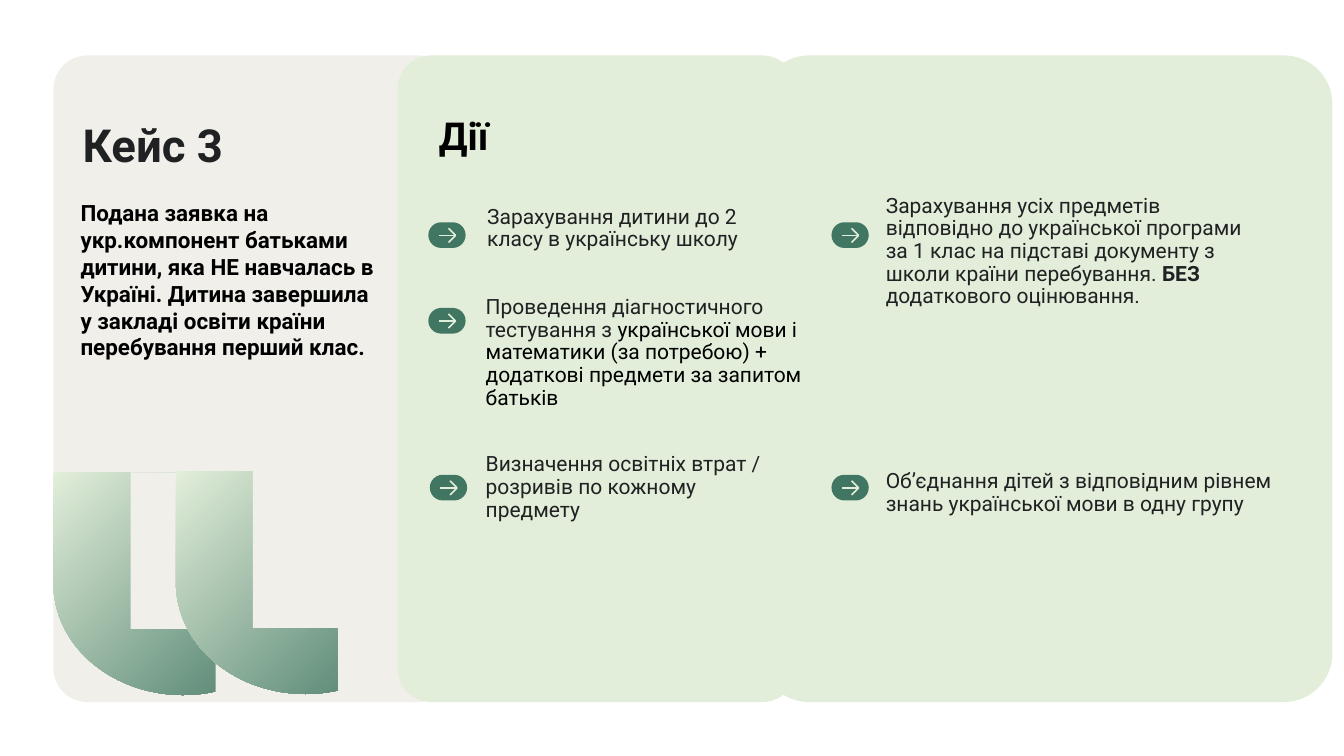
from lxml.etree import SubElement
from pptx import Presentation
from pptx.dml.color import RGBColor
from pptx.enum.shapes import MSO_CONNECTOR as Connector, MSO_SHAPE as Shape
from pptx.enum.text import MSO_ANCHOR as Anchor, MSO_AUTO_SIZE as AutoSize
from pptx.oxml.ns import qn
from pptx.util import Inches, Pt

COLORS = {
    "sand": "F0EFEA",
    "mint": "E2EEDA",
    "green": "417662",
    "ink": "202122",
    "black": "000000",
}
FONT = "Roboto"
PANEL_TOP, PANEL_HEIGHT = 1.1, 12.83
BADGE_WIDTH, BADGE_HEIGHT = 0.74, 0.51
ARROW_TIP = (0.54, 0.26)
ARROW_TAILS = [(0.4, 0.12), (0.4, 0.4), (0.21, 0.26)]


def color(name):
    return RGBColor.from_string(COLORS[name])


def apply(target, values):
    for attribute, value in values.items():
        setattr(target, attribute, value)


class CaseSlide:
    def __init__(self, slide):
        self.shapes = slide.shapes
        self.action_format = {"line_spacing": 0.9, "space_before": Pt(45)}

    def block(self, kind, box, fill=None, corner=None):
        shape = self.shapes.add_shape(kind, *map(Inches, box))
        shape.shadow.inherit = False
        shape.line.fill.background()
        if fill:
            shape.fill.solid()
            shape.fill.fore_color.rgb = color(fill)
        if corner is not None:
            shape.adjustments[0] = corner
        return shape

    def panel(self, left, width, fill):
        box = (left, PANEL_TOP, width, PANEL_HEIGHT)
        self.block(Shape.ROUNDED_RECTANGLE, box, fill, 0.085)

    def quote_mark(self, curve, *cutouts):
        mark = self.block(Shape.FLOWCHART_DELAY, curve)
        mark.rotation = 90
        mark.fill.gradient()
        mark.fill.gradient_angle = 45
        for stop, name in zip(mark.fill.gradient_stops, ("mint", "green")):
            stop.color.rgb = color(name)
        for cutout in cutouts:
            self.block(Shape.RECTANGLE, cutout, "sand")

    def arrow_badge(self, left, top):
        box = (left, top, BADGE_WIDTH, BADGE_HEIGHT)
        self.block(Shape.ROUNDED_RECTANGLE, box, "green", 0.5)
        tip_x, tip_y = ARROW_TIP
        for tail_x, tail_y in ARROW_TAILS:
            ends = (left + tail_x, top + tail_y, left + tip_x, top + tip_y)
            stroke = self.shapes.add_connector(Connector.STRAIGHT, *map(Inches, ends))
            stroke.line.color.rgb = color("mint")
            stroke.line.width = Pt(2.25)
            SubElement(stroke._element.spPr, qn("a:effectLst"))

    def text(self, box, size, runs, paragraph_format=None, inset=0.1, **frame_format):
        frame = self.shapes.add_textbox(*map(Inches, box)).text_frame
        sides = ("left", "top", "right", "bottom")
        apply(frame, {f"margin_{side}": Inches(inset) for side in sides})
        apply(frame, {"word_wrap": True, "auto_size": AutoSize.SHAPE_TO_FIT_TEXT, **frame_format})
        paragraph = frame.paragraphs[0]
        apply(paragraph, paragraph_format or {})
        for words, fill, bold in runs:
            run = paragraph.add_run()
            run.text = words
            apply(run.font, {"name": FONT, "size": Pt(size), "bold": bold})
            run.font.color.rgb = color(fill)

    def action(self, badge, box, runs):
        self.arrow_badge(*badge)
        self.text(box, 30, runs, self.action_format)


ACTIONS = [
    ((8.5, 4.41), (9.57, 3.99, 6.03, 1.11),
     [("Зарахування дитини до 2 класу в українську школу", "ink", False)]),
    ((8.5, 6.11), (9.54, 5.78, 6.59, 2.47),
     [("Проведення діагностичного тестування з ", "ink", False),
      ("української мови і математики (за потребою) + додаткові предмети за запитом батьків",
       "black", False)]),
    ((8.53, 9.42), (9.54, 8.9, 6.03, 1.57),
     [("Визначення освітніх втрат / розривів по кожному предмету", "ink", False)]),
    ((16.5, 4.41), (17.48, 3.77, 7.62, 2.47),
     [("Зарахування усіх предметів відповідно до української програми за 1 клас "
       "на підставі документу з школи країни перебування. ", "ink", False),
      ("БЕЗ ", "ink", True),
      ("додаткового оцінювання.", "ink", False)]),
    ((16.5, 9.42), (17.48, 9.24, 8.56, 1.11),
     [("Об’єднання дітей з відповідним рівнем знань української мови в одну групу",
       "ink", False)]),
]


def main():
    deck = Presentation()
    apply(deck, {"slide_width": Inches(26.67), "slide_height": Inches(15)})
    case = CaseSlide(deck.slides.add_slide(deck.slide_layouts[6]))

    case.panel(1.06, 7.91, "sand")
    case.text((1.5, 3.85, 6.06, 4.51), 32, [
        ("Подана заявка на укр.компонент батьками дитини, яка НЕ навчалась в Україні. "
         "Дитина завершила у закладі освіти країни перебування перший клас.", "black", True)])
    case.text((1.58, 1.59, 7.31, 2.73), 65, [("Кейс 3", "ink", True)],
              {"line_spacing": 0.8}, inset=0.06,
              auto_size=AutoSize.NONE, vertical_anchor=Anchor.MIDDLE)
    case.quote_mark((1.42, 9.01, 4.42, 5.14), (2.59, 9.37, 2.26, 3.11), (4.28, 9.37, 2, 4.47))
    case.quote_mark((3.85, 8.99, 4.42, 5.14), (5.02, 9.2, 3.73, 3.26), (6.71, 9.34, 2, 4.47))

    case.panel(7.89, 7.91, "mint")
    case.panel(15.09, 11.35, "mint")
    case.text((8.61, 2.13, 6.96, 1.13), 55, [("Дії", "black", True)])
    for badge, box, runs in ACTIONS:
        case.action(badge, box, runs)

    deck.save("out.pptx")


if __name__ == "__main__":
    main()
